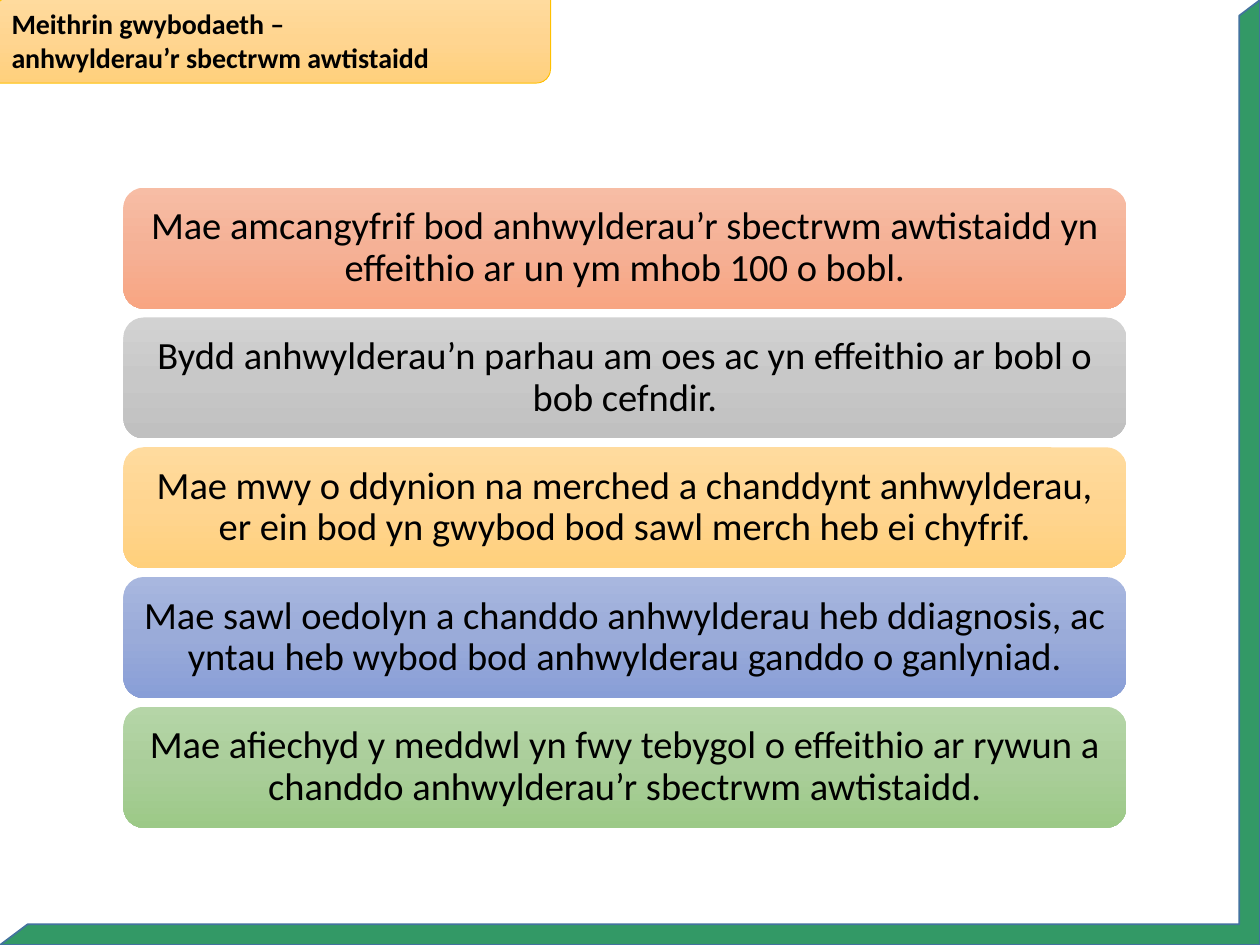
import copy

import pptx
import pptx.dml.color
import pptx.enum.shapes
import pptx.enum.text
import pptx.util

WIDTH, HEIGHT = 10, 7.5
SHAPES = pptx.enum.shapes.MSO_SHAPE
ALIGN = pptx.enum.text.PP_ALIGN
AMBER = ("FFDB9E", "FFD590", "FFD07C")
CARD_LEFT, CARD_TOP, CARD_WIDTH, CARD_HEIGHT = 0.98, 1.49, 7.96, 0.96
CARD_PITCH = 1.03

FACTS = [
    ("Mae amcangyfrif bod anhwylderau’r sbectrwm awtistaidd yn effeithio ar un ym mhob 100 o bobl.",
     ("F7BDA5", "F5B196", "F8A582")),
    ("Bydd anhwylderau’n parhau am oes ac yn effeithio ar bobl o bob cefndir.",
     ("D2D2D2", "C8C8C8", "C0C0C0")),
    ("Mae mwy o ddynion na merched a chanddynt anhwylderau, er ein bod yn gwybod bod sawl merch heb ei chyfrif.",
     AMBER),
    ("Mae sawl oedolyn a chanddo anhwylderau heb ddiagnosis, ac yntau heb wybod bod anhwylderau ganddo o ganlyniad.",
     ("A8B7DF", "9AABD9", "889ED7")),
    ("Mae afiechyd y meddwl yn fwy tebygol o effeithio ar rywun a chanddo anhwylderau’r sbectrwm awtistaidd.",
     ("B5D5A7", "AACE9A", "9CC987")),
]


def rgb(code):
    """Turn a hex string into a colour."""
    return pptx.dml.color.RGBColor.from_string(code)


def paint(shape, colours):
    """Fill a shape with one colour or an even top-to-bottom gradient."""
    if len(colours) == 1:
        shape.fill.solid()
        shape.fill.fore_color.rgb = rgb(colours[0])
        return
    shape.fill.gradient()
    shape.fill.gradient_angle = 270
    stops = shape._element.spPr.find(".//" + pptx.oxml.ns.qn("a:gsLst"))
    while len(stops) < len(colours):
        stops.append(copy.deepcopy(stops[0]))
    for index, (stop, colour) in enumerate(zip(shape.fill.gradient_stops, colours)):
        stop.position = index / (len(colours) - 1)
        stop.color.rgb = rgb(colour)


def add_panel(slide, kind, box, colours, line=None, line_width=1, adjustments=()):
    """Add a flat preset shape with its fill, outline and adjustments."""
    panel = slide.shapes.add_shape(kind, *map(pptx.util.Inches, box))
    panel.shadow.inherit = False
    for index, value in enumerate(adjustments):
        panel.adjustments[index] = value
    paint(panel, colours)
    if line:
        panel.line.color.rgb = rgb(line)
        panel.line.width = pptx.util.Pt(line_width)
    else:
        panel.line.fill.background()
    return panel


def write(shape, text, size, bold=False, align=ALIGN.LEFT, spacing=1.0, margin=None):
    """Write text into a shape, one paragraph per line."""
    frame = shape.text_frame
    frame.word_wrap = True
    frame.vertical_anchor = pptx.enum.text.MSO_ANCHOR.MIDDLE
    if margin is not None:
        frame.margin_left = frame.margin_right = pptx.util.Inches(margin)
        frame.margin_top = frame.margin_bottom = pptx.util.Inches(margin)
    frame.text = text
    for paragraph in frame.paragraphs:
        paragraph.alignment = align
        paragraph.line_spacing = spacing
        paragraph.font.name = "Calibri"
        paragraph.font.size = pptx.util.Pt(size)
        paragraph.font.bold = bold
        paragraph.font.color.rgb = rgb("000000")


def add_border(slide):
    """Add the green frame along the right and bottom edges."""
    border = add_panel(slide, SHAPES.HALF_FRAME, (0, 0, WIDTH, HEIGHT), ["339966"],
                       line="43739E", adjustments=(0.022, 0.022))
    border.rotation = 180


def add_fact(slide, row, text, colours):
    """Add one fact card in its row of the stack."""
    box = (CARD_LEFT, CARD_TOP + row * CARD_PITCH, CARD_WIDTH, CARD_HEIGHT)
    card = add_panel(slide, SHAPES.ROUNDED_RECTANGLE, box, colours)
    write(card, text, size=22, align=ALIGN.CENTER, spacing=0.9, margin=0.09)


def add_heading(slide, text):
    """Add the amber heading tab in the top left corner."""
    tab = add_panel(slide, SHAPES.ROUND_2_DIAG_RECTANGLE, (-0.04, -0.02, 4.41, 0.68), AMBER,
                    line="FFC000", line_width=0.5, adjustments=(0.167, 0))
    write(tab, text, size=16, bold=True)


def main():
    """Build the slide and save it."""
    deck = pptx.Presentation()
    deck.slide_width = pptx.util.Inches(WIDTH)
    deck.slide_height = pptx.util.Inches(HEIGHT)
    slide = deck.slides.add_slide(deck.slide_layouts[6])
    add_border(slide)
    for row, (text, colours) in enumerate(FACTS):
        add_fact(slide, row, text, colours)
    add_heading(slide, "Meithrin gwybodaeth –\nanhwylderau’r sbectrwm awtistaidd")
    deck.save("out.pptx")


if __name__ == "__main__":
    main()
